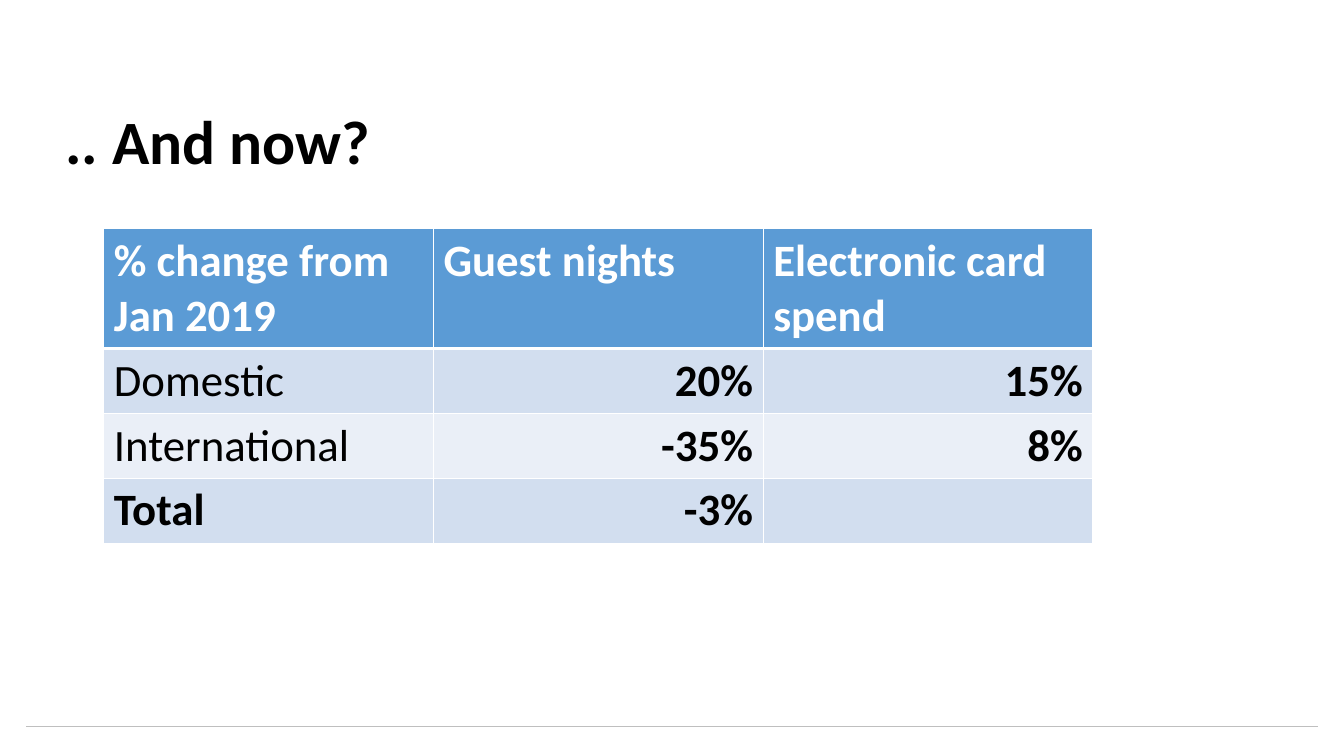
"""Build the slide comparing guest nights and card spend with January 2019."""
from dataclasses import dataclass

from lxml.etree import SubElement
from pptx import Presentation
from pptx.dml.color import RGBColor
from pptx.enum.shapes import MSO_CONNECTOR
from pptx.enum.text import MSO_ANCHOR, MSO_AUTO_SIZE, PP_ALIGN
from pptx.oxml.ns import qn
from pptx.slide import Slide
from pptx.table import _Cell
from pptx.text.text import _Paragraph
from pptx.util import Inches, Pt

FONT = "Calibri"
BLACK = RGBColor(0x00, 0x00, 0x00)
WHITE = RGBColor(0xFF, 0xFF, 0xFF)
GREY = RGBColor(0xBF, 0xBF, 0xBF)
HEADER_BLUE = RGBColor(0x5B, 0x9B, 0xD5)
BAND_DARK = RGBColor(0xD2, 0xDE, 0xEF)
BAND_LIGHT = RGBColor(0xEA, 0xEF, 0xF7)


@dataclass(frozen=True)
class TableRow:
    texts: tuple[str, str, str]
    fill: RGBColor
    height: float = 0.64
    color: RGBColor = BLACK
    bold_label: bool = False
    value_align: PP_ALIGN = PP_ALIGN.RIGHT
    top: float = 1
    bottom: float = 1


ROWS = (
    TableRow(("% change from Jan 2019", "Guest nights", "Electronic card spend"),
             HEADER_BLUE, 1.18, WHITE, True, PP_ALIGN.LEFT, bottom=3),
    TableRow(("Domestic", "20%", "15%"), BAND_DARK, top=3),
    TableRow(("International", "-35%", "8%"), BAND_LIGHT),
    TableRow(("Total", "-3%", ""), BAND_DARK, bold_label=True),
)


def add_run(p: _Paragraph, text: str, size: float, color: RGBColor, bold: bool) -> None:
    """Add one formatted run to a paragraph."""
    r = p.add_run()
    r.text = text
    r.font.name = FONT
    r.font.size = Pt(size)
    r.font.bold = bold
    r.font.color.rgb = color


def set_borders(cell: _Cell, top: float, bottom: float) -> None:
    """Give a cell white borders with the given top and bottom widths."""
    tc_pr = cell._tc.get_or_add_tcPr()
    for tag, width in (("a:lnL", 1), ("a:lnR", 1), ("a:lnT", top), ("a:lnB", bottom)):
        ln = SubElement(tc_pr, qn(tag), w=str(Pt(width)))
        fill = SubElement(ln, qn("a:solidFill"))
        SubElement(fill, qn("a:srgbClr"), val=str(WHITE))


def add_title(s: Slide, text: str) -> None:
    """Place and format the slide title."""
    title = s.shapes.title
    title.left, title.top = Inches(0.55), Inches(0.71)
    title.width, title.height = Inches(11.5), Inches(1.45)
    tf = title.text_frame
    tf.word_wrap = True
    tf.auto_size = MSO_AUTO_SIZE.NONE
    tf.vertical_anchor = MSO_ANCHOR.MIDDLE
    p = tf.paragraphs[0]
    p.alignment = PP_ALIGN.LEFT
    p.line_spacing = 0.9
    add_run(p, text, 44, BLACK, True)


def add_footer_line(s: Slide) -> None:
    """Draw the thin rule at the foot of the slide."""
    line = s.shapes.add_connector(
        MSO_CONNECTOR.STRAIGHT, Inches(0.26), Inches(7.21), Inches(13.07), Inches(7.21))
    line.line.color.rgb = GREY
    line.line.width = Pt(1)
    SubElement(line._element.spPr, qn("a:effectLst"))


def add_change_table(s: Slide, rows: tuple[TableRow, ...]) -> None:
    """Add the table of percentage changes."""
    table = s.shapes.add_table(
        len(rows), 3, Inches(1.03), Inches(2.27), Inches(9.81),
        Inches(sum(row.height for row in rows))).table
    for column in table.columns:
        column.width = Inches(3.27)
    for i, row in enumerate(rows):
        table.rows[i].height = Inches(row.height)
        for j, text in enumerate(row.texts):
            cell = table.cell(i, j)
            set_borders(cell, row.top, row.bottom)
            cell.fill.solid()
            cell.fill.fore_color.rgb = row.fill
            p = cell.text_frame.paragraphs[0]
            p.alignment = row.value_align if j else PP_ALIGN.LEFT
            if text:
                add_run(p, text, 32, row.color, j > 0 or row.bold_label)


def main() -> None:
    """Build and save the presentation."""
    prs = Presentation()
    prs.slide_width, prs.slide_height = Inches(13.33), Inches(7.5)
    s = prs.slides.add_slide(prs.slide_layouts[5])
    s.background.fill.solid()
    s.background.fill.fore_color.rgb = WHITE
    add_footer_line(s)
    add_title(s, ".. And now?")
    add_change_table(s, ROWS)
    prs.save("out.pptx")


if __name__ == "__main__":
    main()
